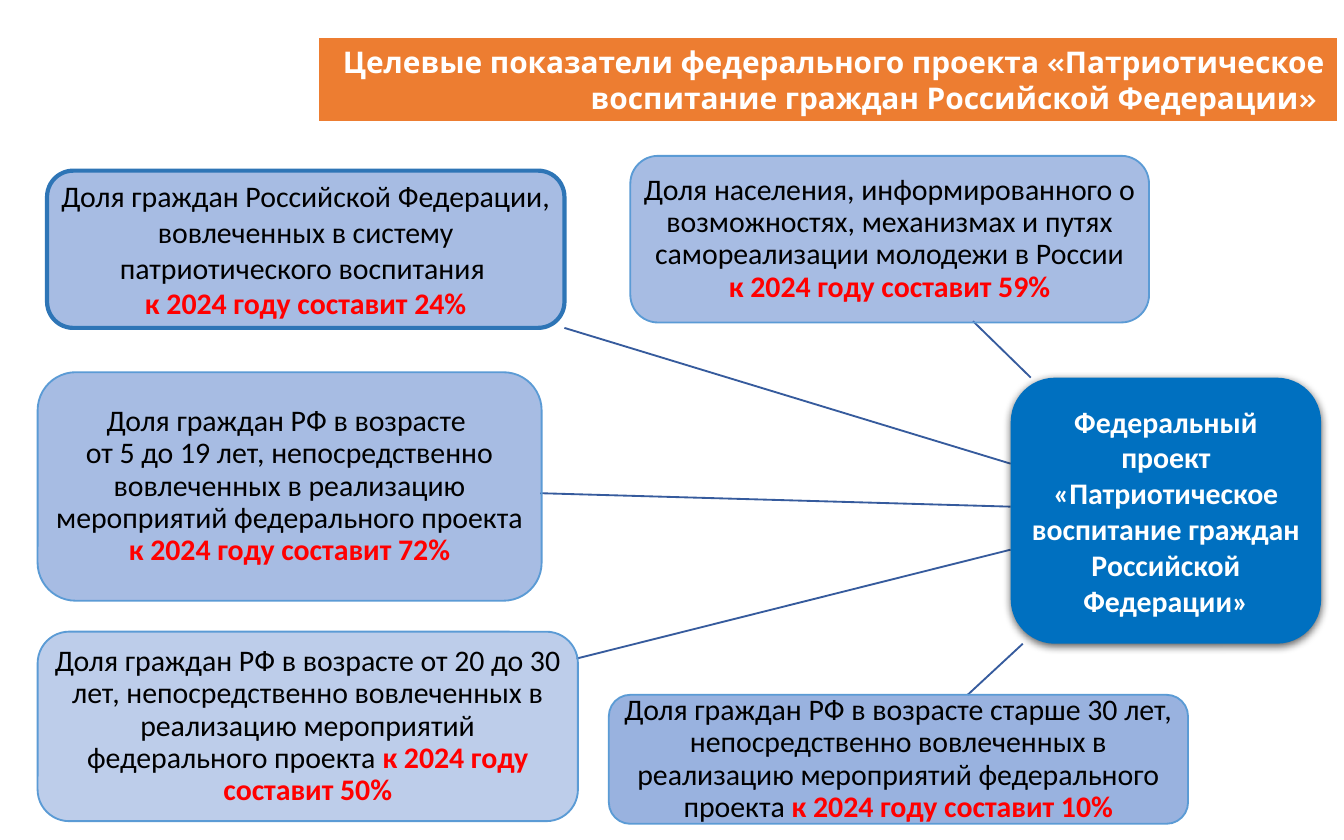
from lxml.etree import SubElement
from pptx import Presentation
from pptx.dml.color import RGBColor
from pptx.enum.shapes import MSO_CONNECTOR as CONNECTOR, MSO_SHAPE as SHAPE
from pptx.enum.text import MSO_ANCHOR as ANCHOR, PP_ALIGN as ALIGN
from pptx.oxml.ns import qn
from pptx.util import Pt

SCALE = 9144
COLORS = {
    "banner": "ED7D31", "hub": "0070C0", "indicator": "4472C4",
    "edge": "5B9BD5", "strong_edge": "2E75B6", "link": "365B9D",
    "white": "FFFFFF", "black": "000000", "target": "FF0000",
}
TITLE = ("Целевые показатели федерального проекта «Патриотическое "
         "воспитание граждан Российской Федерации» ")
HUB_LINES = ["Федеральный проект",
             "«Патриотическое воспитание граждан Российской Федерации»"]
INDICATORS = [
    dict(at=(469, 116, 386, 124), opacity=47, target="59%",
         text="Доля населения, информированного о возможностях, механизмах "
              "и путях самореализации молодежи в России\n"),
    dict(at=(453, 517, 431, 96), opacity=54, target="10%",
         text="Доля граждан РФ в возрасте старше 30 лет, непосредственно "
              "вовлеченных в реализацию мероприятий федерального проекта "),
    dict(at=(35, 127, 385, 117), opacity=47, target="24%",
         text="Доля граждан Российской Федерации, вовлеченных в систему "
              "патриотического воспитания \n",
         edge="strong_edge", edge_width=2.25, spacing=1.0),
    dict(at=(28, 470, 402, 141), opacity=35, target="50%",
         text="Доля граждан РФ в возрасте от 20 до 30 лет, непосредственно "
              "вовлеченных в реализацию мероприятий федерального проекта "),
    dict(at=(28, 277, 375, 170), opacity=47, target="72%",
         text="Доля граждан РФ в возрасте \nот 5 до 19 лет, непосредственно "
              "вовлеченных в реализацию мероприятий федерального проекта "),
]
LINKS = [
    (767, 281, 724, 239), (761, 479, 720, 517), (752, 345, 420, 244),
    (752, 409, 429, 490), (752, 377, 402, 367),
]


def px(*lengths):
    return [length * SCALE for length in lengths]


def color(name):
    return RGBColor.from_string(COLORS[name])


def add_box(page, kind, at, fill, edge=None, edge_width=1, margin=4):
    box = page.shapes.add_shape(kind, *px(*at))
    box.shadow.inherit = False
    box.fill.solid()
    box.fill.fore_color.rgb = color(fill)
    if edge:
        box.line.color.rgb = color(edge)
        box.line.width = Pt(edge_width)
    else:
        box.line.fill.background()
    frame = box.text_frame
    frame.word_wrap = True
    frame.vertical_anchor = ANCHOR.MIDDLE
    frame.margin_left = frame.margin_right = margin * SCALE
    frame.margin_top = frame.margin_bottom = min(margin, 5) * SCALE
    return box


def set_opacity(box, percent):
    tone = box.fill._xPr.find(qn("a:solidFill")).find(qn("a:srgbClr"))
    SubElement(tone, qn("a:alpha"), val=str(percent * 1000))


def add_drop_shadow(box):
    effects = box._element.spPr.find(qn("a:effectLst"))
    shadow = SubElement(effects, qn("a:outerShdw"), blurRad=str(Pt(4.5)),
                        dist=str(Pt(1.5)), dir="5400000", rotWithShape="0")
    tone = SubElement(shadow, qn("a:srgbClr"), val=COLORS["black"])
    SubElement(tone, qn("a:alpha"), val="63000")


def style_paragraph(para, align, font="Calibri", tone=None, bold=False):
    para.alignment = align
    para.font.name = font
    para.font.size = Pt(16)
    para.font.bold = bold
    if tone:
        para.font.color.rgb = color(tone)


def add_span(para, text, tone, bold=False):
    for index, line in enumerate(text.split("\n")):
        if index:
            para.add_line_break()
        if line:
            span = para.add_run()
            span.text = line
            span.font.color.rgb = color(tone)
            span.font.bold = bold


def add_indicator(page, at, opacity, target, text, edge="edge",
                  edge_width=1, spacing=0.9):
    box = add_box(page, SHAPE.ROUNDED_RECTANGLE, at, "indicator",
                  edge, edge_width)
    set_opacity(box, opacity)
    para = box.text_frame.paragraphs[0]
    para.line_spacing = spacing
    style_paragraph(para, ALIGN.CENTER)
    add_span(para, text, "black")
    add_span(para, f"к 2024 году составит {target}", "target", True)


def add_hub(page):
    box = add_box(page, SHAPE.ROUNDED_RECTANGLE, (752, 281, 231, 198), "hub")
    add_drop_shadow(box)
    box.text_frame.text = "\n".join(HUB_LINES)
    for para in box.text_frame.paragraphs:
        style_paragraph(para, ALIGN.CENTER, tone="white", bold=True)


def add_banner(page):
    box = add_box(page, SHAPE.RECTANGLE, (236, 27, 760, 64), "banner",
                  "white", 1.5, margin=10)
    box.text_frame.text = TITLE
    style_paragraph(box.text_frame.paragraphs[0], ALIGN.RIGHT, "Karla",
                    "white", True)


def add_link(page, ends):
    link = page.shapes.add_connector(CONNECTOR.STRAIGHT, *px(*ends))
    link.line.color.rgb = color("link")
    link.line.width = Pt(1)
    SubElement(link._element.spPr, qn("a:effectLst"))


def main():
    deck = Presentation()
    deck.slide_width, deck.slide_height = px(1000, 625)
    page = deck.slides.add_slide(deck.slide_layouts[6])
    for ends in LINKS:
        add_link(page, ends)
    add_hub(page)
    for indicator in INDICATORS:
        add_indicator(page, **indicator)
    add_banner(page)
    deck.save("out.pptx")


if __name__ == "__main__":
    main()
